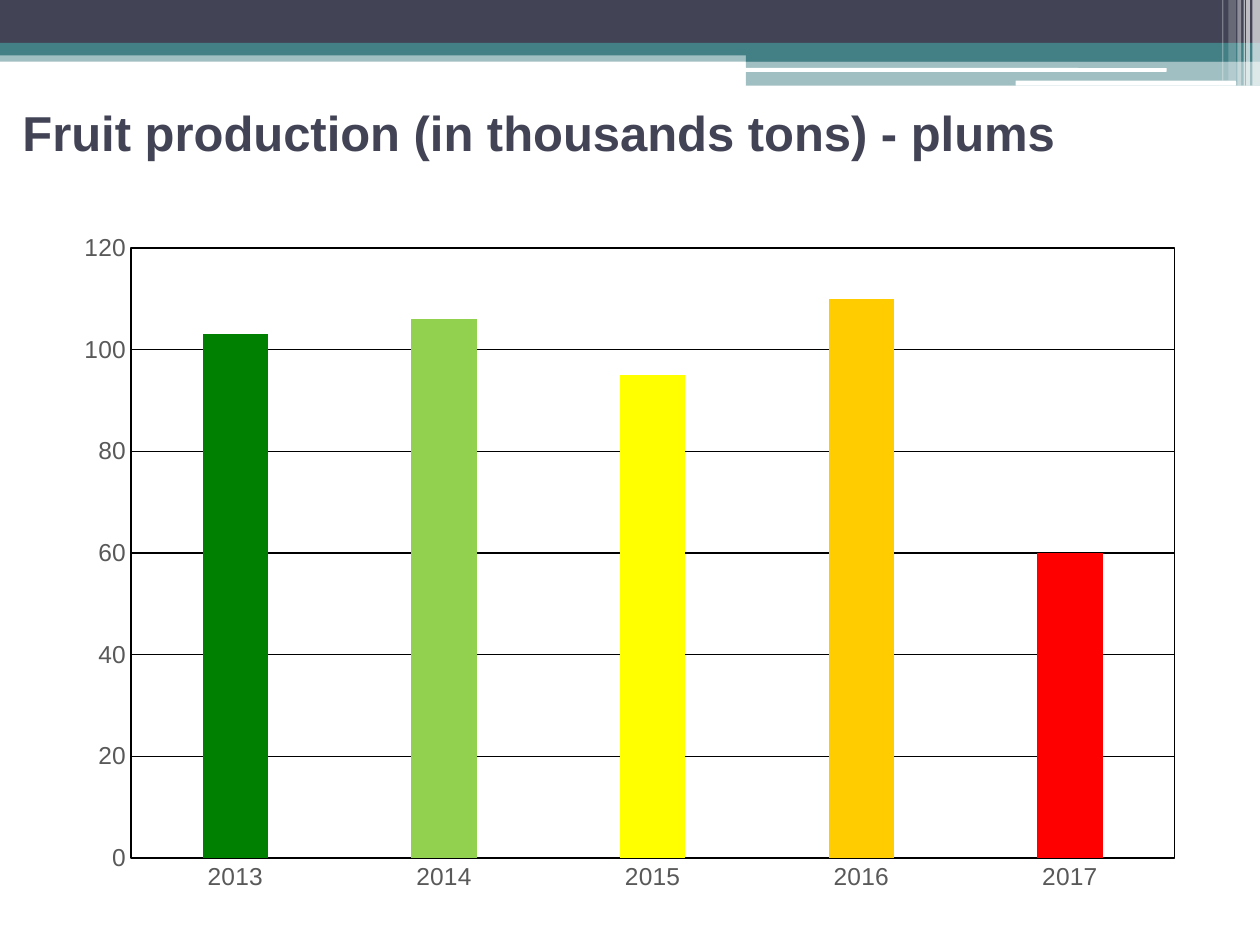
import pptx
import pptx.chart.data
import pptx.dml.color
import pptx.enum.chart
import pptx.enum.shapes
import pptx.enum.text
import pptx.oxml
import pptx.oxml.ns
import pptx.util
from pptx.util import Inches

COLORS = {
    "navy": "424456", "teal": "438086", "white": "FFFFFF", "black": "000000",
    "label": "595959", "series": "53548A",
}
PLUMS = [
    ("2013", 103, "008000"),
    ("2014", 106, "92D050"),
    ("2015", 95, "FFFF00"),
    ("2016", 110, "FFCC00"),
    ("2017", 60, "FF0000"),
]
BANDS = [
    ("RECTANGLE", 0, 0.4, 10, 0.09, "teal", 50),
    ("RECTANGLE", 0, 0, 10, 0.34, "navy", 100),
    ("RECTANGLE", 0, 0.34, 10, 0.1, "teal", 100),
    ("RECTANGLE", 5.92, 0.39, 4.08, 0.1, "teal", 100),
    ("RECTANGLE", 5.92, 0.48, 4.08, 0.2, "teal", 50),
    ("ROUNDED_RECTANGLE", 5.91, 0.54, 3.35, 0.03, "white", 100),
    ("ROUNDED_RECTANGLE", 8.06, 0.64, 1.75, 0.04, "white", 100),
]
STRIPES = [
    (9.94, 0.06, 0.68, 65),
    (9.89, 0.03, 0.68, 65),
    (9.87, 0.01, 0.68, 60),
    (9.82, 0.03, 0.68, 40),
    (9.75, 0.06, 0.64, 20),
    (9.7, 0.01, 0.64, 30),
]
BANDS += [("RECTANGLE", left, 0, width, height, "white", opacity)
          for left, width, height, opacity in STRIPES]


def rgb(value):
    return pptx.dml.color.RGBColor.from_string(value)


deck = pptx.Presentation()
deck.slide_width, deck.slide_height = Inches(10), Inches(7.5)
page = deck.slides.add_slide(deck.slide_layouts[6])

for kind, left, top, width, height, color, opacity in BANDS:
    band = page.shapes.add_shape(
        pptx.enum.shapes.MSO_SHAPE[kind],
        Inches(left), Inches(top), Inches(width), Inches(height))
    band.shadow.inherit = False
    band.line.fill.background()
    band.fill.solid()
    band.fill.fore_color.rgb = rgb(COLORS[color])
    if opacity < 100:
        tint = band.fill._xPr.find(".//" + pptx.oxml.ns.qn("a:srgbClr"))
        alpha = tint.makeelement(pptx.oxml.ns.qn("a:alpha"), {"val": str(opacity * 1000)})
        tint.append(alpha)

title = page.shapes.add_textbox(Inches(0.08), Inches(0.67), Inches(9.75), Inches(0.75))
title.text_frame.word_wrap = True
title.text_frame.vertical_anchor = pptx.enum.text.MSO_ANCHOR.MIDDLE
title.text_frame.text = "Fruit production (in thousands tons) - plums"
span = title.text_frame.paragraphs[0].runs[0]
span.font.name = "Arial"
span.font.size = pptx.util.Pt(28)
span.font.bold = True
span.font.color.rgb = rgb(COLORS["navy"])

data = pptx.chart.data.CategoryChartData()
data.categories = [year for year, tons, color in PLUMS]
data.add_series("Series 1", [tons for year, tons, color in PLUMS])
chart = page.shapes.add_chart(
    pptx.enum.chart.XL_CHART_TYPE.COLUMN_CLUSTERED,
    Inches(0.5), Inches(1.75), Inches(9), Inches(5.44), data).chart
chart.has_legend = False
chart.has_title = False
chart.font.name = "Cambria"
chart.font.size = pptx.util.Pt(10)
chart.font.color.rgb = rgb(COLORS["black"])

plot = chart.plots[0]
plot.gap_width = 219
plot.overlap = -27
plot.vary_by_categories = False
columns = plot.series[0]
columns.format.fill.solid()
columns.format.fill.fore_color.rgb = rgb(COLORS["series"])
for index, (year, tons, color) in enumerate(PLUMS):
    fill = columns.points[index].format.fill
    fill.solid()
    fill.fore_color.rgb = rgb(color)

for axis in (chart.category_axis, chart.value_axis):
    axis.major_tick_mark = pptx.enum.chart.XL_TICK_MARK.NONE
    axis.minor_tick_mark = pptx.enum.chart.XL_TICK_MARK.NONE
    axis.tick_labels.font.name = "Arial"
    axis.tick_labels.font.size = pptx.util.Pt(14)
    axis.tick_labels.font.color.rgb = rgb(COLORS["label"])

chart.value_axis.minimum_scale = 0
chart.value_axis.maximum_scale = 120
chart.value_axis.major_unit = 20
chart.value_axis.has_major_gridlines = True
chart.value_axis.format.line.fill.background()
for line in (chart.category_axis.format.line, chart.value_axis.major_gridlines.format.line):
    line.width = pptx.util.Pt(0.75)
    line.color.rgb = rgb(COLORS["black"])

area = chart._chartSpace.chart.plotArea
for old in area.findall(pptx.oxml.ns.qn("c:layout")):
    area.remove(old)
area.insert(0, pptx.oxml.parse_xml(
    f'<c:layout {pptx.oxml.ns.nsdecls("c")}><c:manualLayout>'
    '<c:layoutTarget val="inner"/><c:xMode val="edge"/><c:yMode val="edge"/>'
    '<c:x val="0.06"/><c:y val="0.04"/><c:w val="0.92"/><c:h val="0.89"/>'
    '</c:manualLayout></c:layout>'))
area.append(pptx.oxml.parse_xml(
    f'<c:spPr {pptx.oxml.ns.nsdecls("c", "a")}><a:noFill/><a:ln w="9525"><a:solidFill>'
    f'<a:srgbClr val="{COLORS["black"]}"/></a:solidFill></a:ln></c:spPr>'))

deck.save("out.pptx")
